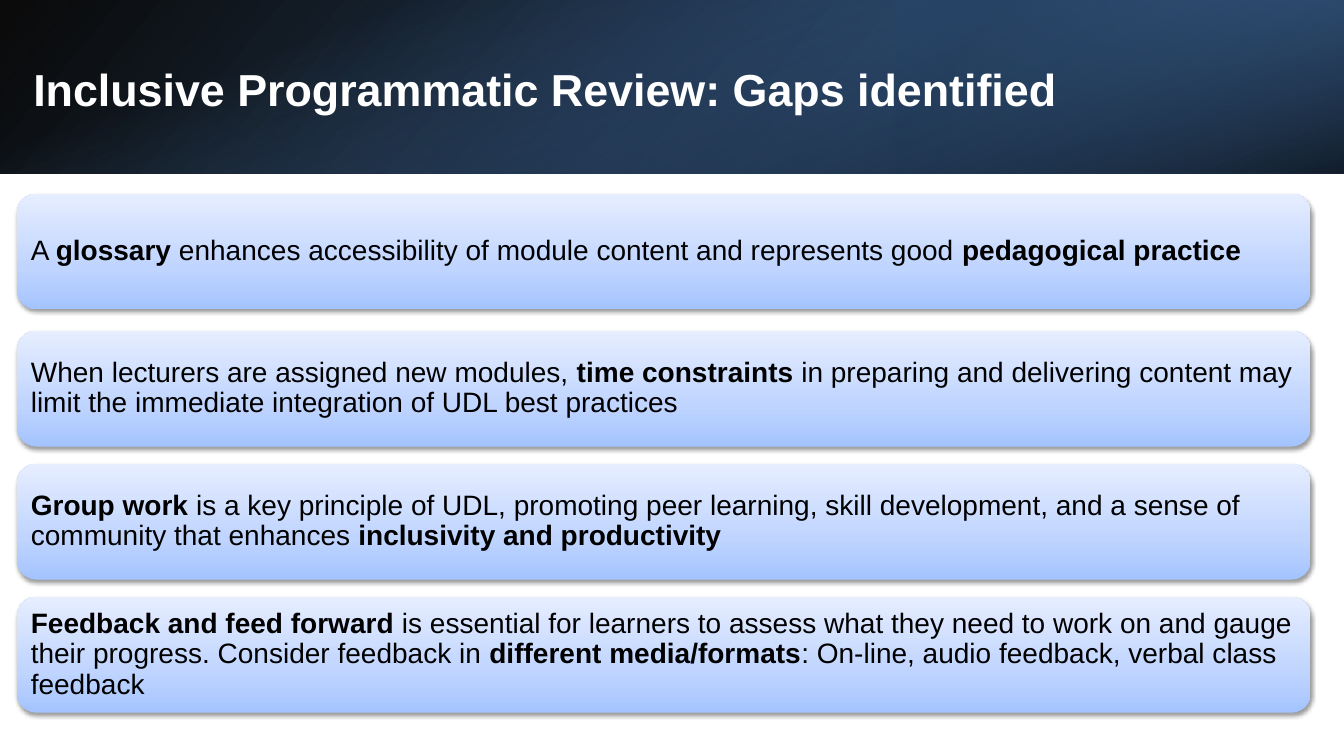
from lxml.etree import SubElement
from pptx import Presentation
from pptx.dml.color import RGBColor
from pptx.enum.shapes import MSO_SHAPE
from pptx.enum.text import MSO_ANCHOR, MSO_AUTO_SIZE, PP_ALIGN
from pptx.oxml.ns import qn
from pptx.util import Inches, Pt

WIDTH, HEIGHT = 13.33, 7.5
HEADER_HEIGHT = 1.72
CARD_LEFT, CARD_WIDTH, CARD_HEIGHT = 0.17, 12.83, 1.15
FIRST_TOP, SECOND_TOP, CARD_PITCH = 1.92, 3.28, 1.32
FONT = "Arial"
COLORS = {
    "black": "000000", "white": "FFFFFF",
    "steel": "376092", "navy": "254061", "blue": "4F81BD",
    "card_dark": "A4C4FF", "card_mid": "BFD4FF", "card_light": "E6EEFF",
}

# Double asterisks enclose the bold words
GAPS = [
    "A **glossary** enhances accessibility of module content and represents good "
    "**pedagogical practice**",
    "When lecturers are assigned new modules, **time constraints **in preparing and "
    "delivering content may limit the immediate integration of UDL best practices",
    "**Group work **is a key principle of UDL, promoting peer learning, skill development, "
    "and a sense of community that enhances **inclusivity and productivity**",
    "**Feedback and feed forward **is essential for learners to assess what they need to "
    "work on and gauge their progress. Consider feedback in **different media/formats**: "
    "On-line, audio feedback, verbal class feedback",
]


def add_color(parent, name, opacity):
    color = SubElement(parent, qn("a:srgbClr"), val=COLORS[name])
    if opacity < 100:
        SubElement(color, qn("a:alpha"), val=str(opacity * 1000))


def fill_gradient(shape, angle, stops):
    """Fill with (position, color name, opacity) stops; angle runs clockwise."""
    shape.fill.gradient()
    gradient = shape._element.spPr.find(qn("a:gradFill"))
    for child in list(gradient):
        gradient.remove(child)
    gradient.set("rotWithShape", "1")
    stop_list = SubElement(gradient, qn("a:gsLst"))
    for position, name, opacity in stops:
        stop = SubElement(stop_list, qn("a:gs"), pos=str(position * 1000))
        add_color(stop, name, opacity)
    SubElement(gradient, qn("a:lin"), ang=str(angle * 60000), scaled="0")


def add_gradient_shape(slide, kind, box, angle, stops):
    shape = slide.shapes.add_shape(kind, *map(Inches, box))
    shape.shadow.inherit = False
    shape.line.fill.background()
    fill_gradient(shape, angle, stops)
    return shape


def add_band(slide, box, angle, stops, rotation=0, flipped=False):
    band = add_gradient_shape(slide, MSO_SHAPE.RECTANGLE, box, angle, stops)
    band.rotation = rotation
    if flipped:
        band._element.spPr.find(qn("a:xfrm")).set("flipH", "1")


def add_header(slide):
    add_band(slide, (0, 0, WIDTH, HEADER_HEIGHT), 140,
             [(0, "black", 96), (100, "steel", 100)], flipped=True)
    add_band(slide, (WIDTH * 2 / 3, 0, WIDTH / 3, HEADER_HEIGHT), 320,
             [(19, "navy", 68), (100, "blue", 79)], rotation=180, flipped=True)
    # An upright band, turned about its centre to cover the header
    offset = (WIDTH - HEADER_HEIGHT) / 2
    add_band(slide, (offset, -offset, HEADER_HEIGHT, WIDTH), 340,
             [(23, "blue", 0), (99, "black", 74)], rotation=90)


def format_font(font, size, color, bold):
    font.name, font.size, font.bold = FONT, Pt(size), bold
    font.color.rgb = RGBColor.from_string(COLORS[color])


def set_frame(text_frame, margin):
    text_frame.word_wrap = True
    text_frame.auto_size = MSO_AUTO_SIZE.NONE
    text_frame.vertical_anchor = MSO_ANCHOR.MIDDLE
    text_frame.margin_left = text_frame.margin_right = Inches(margin)
    text_frame.margin_top = text_frame.margin_bottom = Inches(margin)


def add_title(slide, text):
    title = slide.shapes.title
    title.left, title.top = Inches(0.33), Inches(0.4)
    title.width, title.height = Inches(10.98), Inches(0.96)
    title.text_frame.text = text
    set_frame(title.text_frame, 0)
    paragraph = title.text_frame.paragraphs[0]
    paragraph.alignment = PP_ALIGN.LEFT
    format_font(paragraph.runs[0].font, 32, "white", True)
    # Bring the title in front of the header bands
    slide.shapes._spTree.append(title._element)


def add_soft_shadow(shape):
    effects = shape._element.spPr.find(qn("a:effectLst"))
    shadow = SubElement(effects, qn("a:outerShdw"), blurRad=str(Pt(3.1)),
                        dist=str(Pt(1.6)), dir=str(90 * 60000), rotWithShape="0")
    add_color(shadow, "black", 38)


def add_card(slide, top, text):
    card = add_gradient_shape(
        slide, MSO_SHAPE.ROUNDED_RECTANGLE, (CARD_LEFT, top, CARD_WIDTH, CARD_HEIGHT), 270,
        [(0, "card_dark", 100), (35, "card_mid", 100), (100, "card_light", 100)])
    add_soft_shadow(card)
    # The rounded corners already inset the text by about 0.05 inches
    set_frame(card.text_frame, 0.08)
    paragraph = card.text_frame.paragraphs[0]
    paragraph.alignment = PP_ALIGN.LEFT
    paragraph.line_spacing = 0.9
    for index, part in enumerate(text.split("**")):
        if part:
            run = paragraph.add_run()
            run.text = part
            format_font(run.font, 20, "black", index % 2 == 1)


def main():
    presentation = Presentation()
    presentation.slide_width, presentation.slide_height = Inches(WIDTH), Inches(HEIGHT)
    slide = presentation.slides.add_slide(presentation.slide_layouts[5])
    add_header(slide)
    add_title(slide, "Inclusive Programmatic Review: Gaps identified")
    # The first card stands slightly apart from the evenly spaced rest
    tops = [FIRST_TOP] + [SECOND_TOP + CARD_PITCH * row for row in range(len(GAPS) - 1)]
    for top, text in zip(tops, GAPS):
        add_card(slide, top, text)
    presentation.save("out.pptx")


if __name__ == "__main__":
    main()
